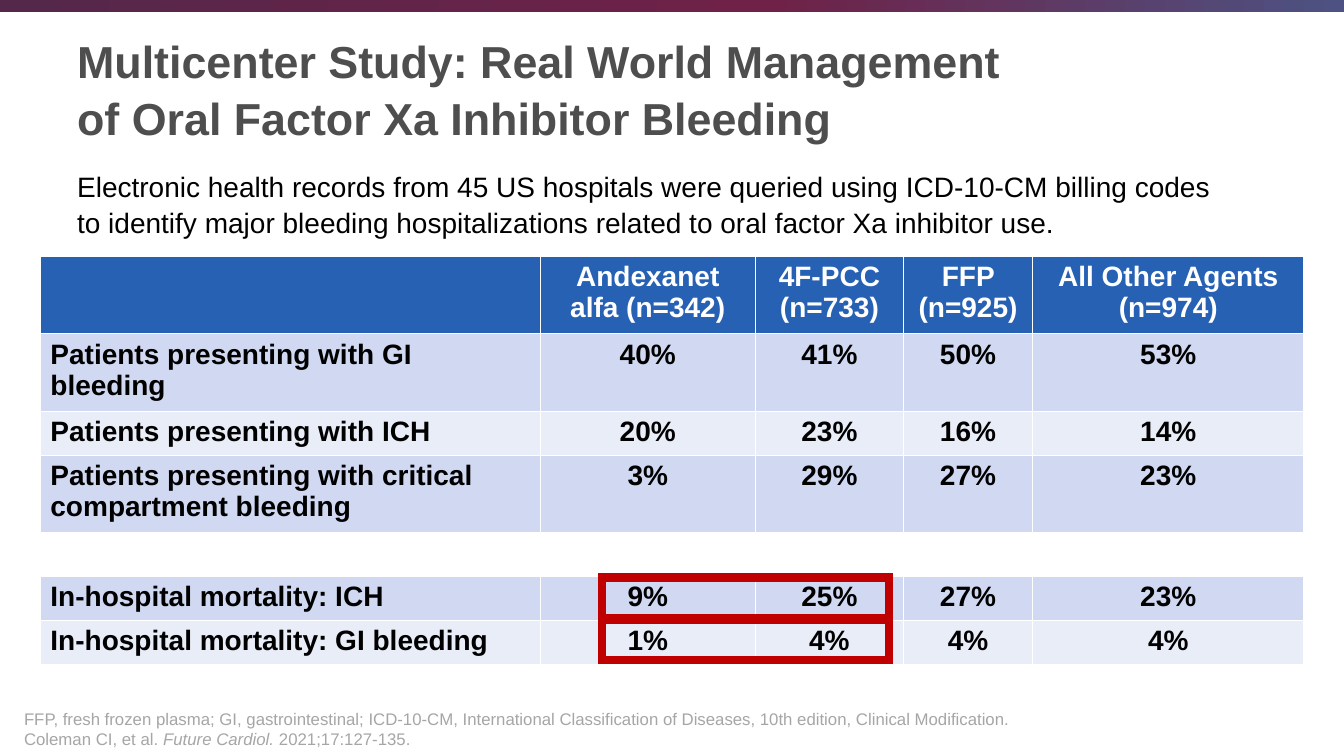
from copy import deepcopy
from dataclasses import dataclass

from lxml import etree
from pptx import Presentation
from pptx.dml.color import RGBColor
from pptx.enum.shapes import MSO_SHAPE
from pptx.enum.text import MSO_ANCHOR, PP_ALIGN
from pptx.oxml.ns import qn
from pptx.util import Inches, Pt

RECTANGLE = MSO_SHAPE.RECTANGLE
TOP, MIDDLE = MSO_ANCHOR.TOP, MSO_ANCHOR.MIDDLE
LEFT, CENTER = PP_ALIGN.LEFT, PP_ALIGN.CENTER

FONT_NAME = "Arial"
WHITE = RGBColor(0xFF, 0xFF, 0xFF)
BLACK = RGBColor(0, 0, 0)
TITLE_GRAY = RGBColor(0x4D, 0x4E, 0x4D)
FOOTNOTE_GRAY = RGBColor(0xA6, 0xA6, 0xA6)
HEADER_BLUE = RGBColor(0x26, 0x61, 0xB4)
DARK_BAND = RGBColor(0xD0, 0xD9, 0xF1)
LIGHT_BAND = RGBColor(0xE9, 0xED, 0xF8)
HIGHLIGHT_RED = RGBColor(0xC0, 0, 0)
BANNER_STOPS = (
    (0, RGBColor(0x54, 0x28, 0x4B)),
    (0.57, RGBColor(0x6F, 0x21, 0x47)),
    (1, RGBColor(0x4D, 0x52, 0x82)),
)

# The slide is a grid of 100 columns by 100 rows.
SLIDE_WIDTH, SLIDE_HEIGHT = Inches(13.33), Inches(7.5)
COLUMN, ROW = SLIDE_WIDTH / 100, SLIDE_HEIGHT / 100


@dataclass(frozen=True)
class Area:
    """Position and size in grid columns and rows."""
    left: float
    top: float
    width: float
    height: float

    def lengths(self) -> tuple[int, int, int, int]:
        return (round(self.left * COLUMN), round(self.top * ROW),
                round(self.width * COLUMN), round(self.height * ROW))


@dataclass(frozen=True)
class TextBlock:
    area: Area
    paragraphs: tuple[tuple[str, ...], ...]
    size: float
    color: RGBColor
    bold: bool = False
    anchor: MSO_ANCHOR = TOP
    line_spacing: float = 1.0


@dataclass(frozen=True)
class TableRow:
    cells: tuple[str, ...]
    height: float
    fill: RGBColor
    color: RGBColor = BLACK


JOURNAL = "Future Cardiol. "
TEXT_BLOCKS = (
    TextBlock(Area(5, 2.93, 88.12, 17.33),
              (("Multicenter Study: Real World Management\vof Oral Factor Xa Inhibitor Bleeding",),),
              32, TITLE_GRAY, bold=True, anchor=MIDDLE, line_spacing=1.05),
    TextBlock(Area(5, 21.6, 88.12, 12.4),
              (("Electronic health records from 45 US hospitals were queried using ICD-10-CM "
                "billing codes to identify major bleeding hospitalizations related to oral "
                "factor Xa inhibitor use.",),),
              20, BLACK, line_spacing=1.05),
    TextBlock(Area(1.05, 93.07, 76.5, 6.67),
              (("FFP, fresh frozen plasma; GI, gastrointestinal; ICD-10-CM, International "
                "Classification of Diseases, 10th edition, Clinical Modification.",),
               ("Coleman CI, et al. ", JOURNAL, "2021;17:127-135.")),
              12, FOOTNOTE_GRAY),
)

TABLE_LEFT, TABLE_TOP = 3, 33.87
COLUMN_WIDTHS = (37.2, 16, 11.03, 9.6, 20.2)
TALL, SHORT = 10.27, 5.8
TABLE_ROWS = (
    TableRow(("", "Andexanet alfa (n=342)", "4F-PCC (n=733)", "FFP (n=925)",
              "All Other Agents (n=974)"), TALL, HEADER_BLUE, WHITE),
    TableRow(("Patients presenting with GI bleeding", "40%", "41%", "50%", "53%"), TALL, DARK_BAND),
    TableRow(("Patients presenting with ICH", "20%", "23%", "16%", "14%"), SHORT, LIGHT_BAND),
    TableRow(("Patients presenting with critical compartment bleeding", "3%", "29%", "27%", "23%"),
             TALL, DARK_BAND),
    TableRow(("",), SHORT, WHITE),
    TableRow(("In-hospital mortality: ICH", "9%", "25%", "27%", "23%"), SHORT, DARK_BAND),
    TableRow(("In-hospital mortality: GI bleeding", "1%", "4%", "4%", "4%"), SHORT, LIGHT_BAND),
)
HIGHLIGHTS = tuple(Area(44.78, top, 21.38, 5.33) for top in (76.4, 82))


def format_font(font, size: float, color: RGBColor, bold: bool) -> None:
    font.name = FONT_NAME
    font.size = Pt(size)
    font.bold = bold
    font.color.rgb = color


def add_banner(slide) -> None:
    banner = slide.shapes.add_shape(RECTANGLE, *Area(0, 0, 100, 1.6).lengths())
    banner.shadow.inherit = False
    banner.line.fill.background()
    banner.fill.gradient()
    banner.fill.gradient_angle = 0
    stop_list = banner.fill._xPr.find(qn("a:gradFill")).find(qn("a:gsLst"))
    stop_list.append(deepcopy(stop_list[0]))
    for stop, (position, color) in zip(banner.fill.gradient_stops, BANNER_STOPS):
        stop.position = position
        stop.color.rgb = color


def add_text_block(slide, block: TextBlock) -> None:
    text_frame = slide.shapes.add_textbox(*block.area.lengths()).text_frame
    text_frame.word_wrap = True
    text_frame.vertical_anchor = block.anchor
    for index, pieces in enumerate(block.paragraphs):
        paragraph = text_frame.add_paragraph() if index else text_frame.paragraphs[0]
        paragraph.line_spacing = block.line_spacing
        if len(pieces) == 1:
            paragraph.text = pieces[0]
        else:
            for piece in pieces:
                paragraph.add_run().text = piece
        for run in paragraph.runs:
            format_font(run.font, block.size, block.color, block.bold)
            run.font.italic = run.text == JOURNAL


def add_results_table(slide) -> None:
    area = Area(TABLE_LEFT, TABLE_TOP, sum(COLUMN_WIDTHS), sum(row.height for row in TABLE_ROWS))
    table = slide.shapes.add_table(len(TABLE_ROWS), len(COLUMN_WIDTHS), *area.lengths()).table
    for column, width in zip(table.columns, COLUMN_WIDTHS):
        column.width = round(width * COLUMN)
    for row_index, row in enumerate(TABLE_ROWS):
        table.rows[row_index].height = round(row.height * ROW)
        if len(row.cells) == 1:
            table.cell(row_index, 0).merge(table.cell(row_index, len(COLUMN_WIDTHS) - 1))
        for column_index, text in enumerate(row.cells):
            cell = table.cell(row_index, column_index)
            cell.fill.solid()
            cell.fill.fore_color.rgb = row.fill
            paragraph = cell.text_frame.paragraphs[0]
            paragraph.text = text
            paragraph.alignment = CENTER if column_index else LEFT
            for run in paragraph.runs:
                format_font(run.font, 20, row.color, True)


def add_highlight(slide, area: Area) -> None:
    frame = slide.shapes.add_shape(RECTANGLE, *area.lengths())
    frame.shadow.inherit = False
    frame.fill.background()
    frame.line.color.rgb = HIGHLIGHT_RED
    frame.line.width = Pt(6)
    etree.SubElement(frame.line._get_or_add_ln(), qn("a:miter"), lim="800000")


def main() -> None:
    presentation = Presentation()
    presentation.slide_width, presentation.slide_height = SLIDE_WIDTH, SLIDE_HEIGHT
    slide = presentation.slides.add_slide(presentation.slide_layouts[6])
    add_banner(slide)
    for block in TEXT_BLOCKS:
        add_text_block(slide, block)
    add_results_table(slide)
    for area in HIGHLIGHTS:
        add_highlight(slide, area)
    presentation.save("out.pptx")


if __name__ == "__main__":
    main()
